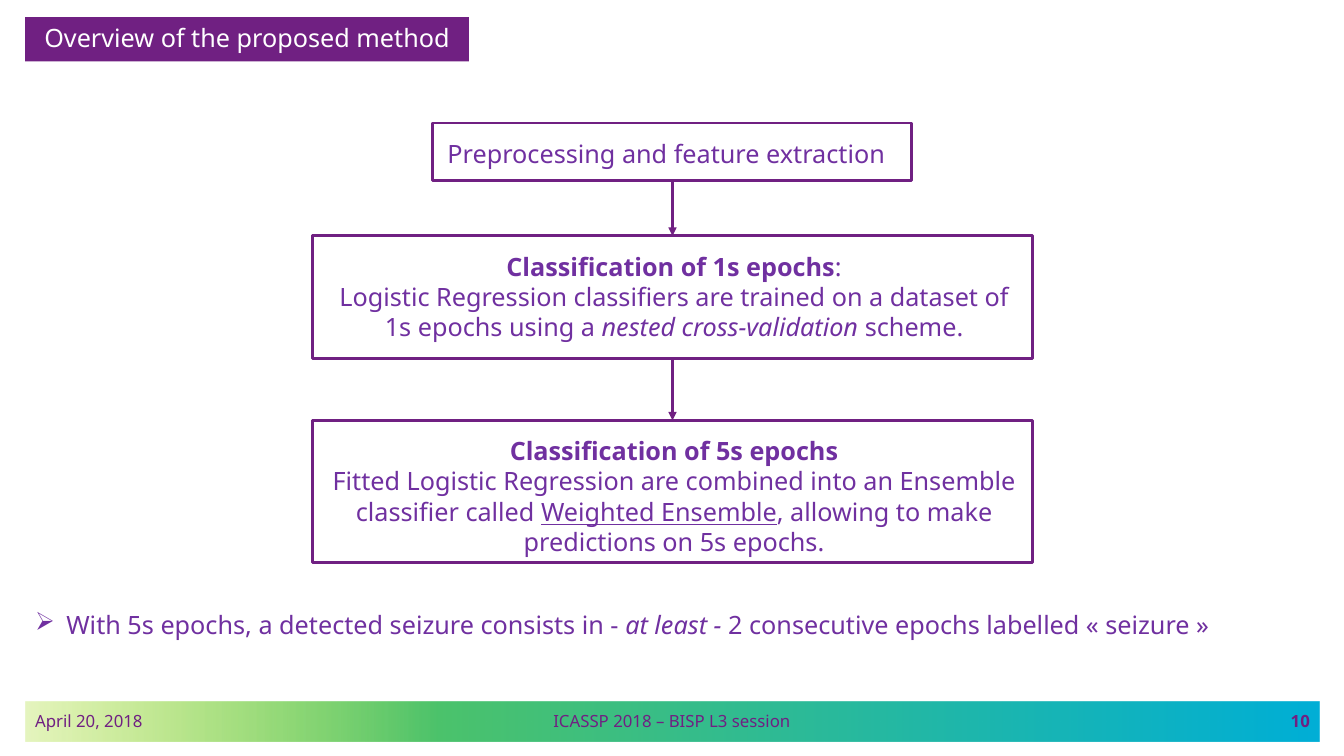
import pptx
import pptx.util
import pptx.dml.color
import pptx.enum.shapes
import pptx.enum.text
import pptx.oxml
import pptx.oxml.ns
from dataclasses import dataclass
from pptx.util import Inches


@dataclass(frozen=True)
class Theme:
    font: str = "Noto Sans"
    plum: str = "702082"
    violet: str = "7030A0"
    white: str = "FFFFFF"
    # position in percent, colour, opacity in percent
    band: tuple = ((0, "97D700", 25), (32, "4CC36C", 100), (100, "00AFD7", 100))
    body_size: int = 18
    footer_size: int = 12
    line_width: int = 2


theme = Theme()
rgb = pptx.dml.color.RGBColor.from_string
LEFT, CENTER, RIGHT = (pptx.enum.text.PP_ALIGN.LEFT, pptx.enum.text.PP_ALIGN.CENTER,
                       pptx.enum.text.PP_ALIGN.RIGHT)
TOP, MIDDLE = pptx.enum.text.MSO_ANCHOR.TOP, pptx.enum.text.MSO_ANCHOR.MIDDLE
RECTANGLE = pptx.enum.shapes.MSO_SHAPE.RECTANGLE

presentation = pptx.Presentation()
presentation.slide_width = Inches(13.33)
presentation.slide_height = Inches(7.5)
slide = presentation.slides.add_slide(presentation.slide_layouts[6])


def add_rectangle(left, top, width, height):
    shape = slide.shapes.add_shape(RECTANGLE, Inches(left), Inches(top),
                                   Inches(width), Inches(height))
    shape.shadow.inherit = False
    return shape


def write(shape, paragraphs, size, color, align, anchor=TOP):
    """Fill a shape with paragraphs of (text, style) runs; style holds any of b, i, u."""
    frame = shape.text_frame
    frame.word_wrap = True
    frame.vertical_anchor = anchor
    for index, runs in enumerate(paragraphs):
        paragraph = frame.add_paragraph() if index else frame.paragraphs[0]
        paragraph.alignment = align
        for text, style in runs:
            run = paragraph.add_run()
            run.text = text
            run.font.name = theme.font
            run.font.size = pptx.util.Pt(size)
            run.font.color.rgb = rgb(color)
            run.font.bold = "b" in style
            run.font.italic = "i" in style
            run.font.underline = "u" in style


# Footer band and its three fields
band = add_rectangle(0.25, 6.96, 12.84, 0.4)
band.line.fill.background()
band.fill.gradient()
band.fill.gradient_angle = 0
stops = band.fill._fill._gradFill.find(pptx.oxml.ns.qn("a:gsLst"))
for stop in list(stops):
    stops.remove(stop)
for position, color, opacity in theme.band:
    stops.append(pptx.oxml.parse_xml(
        f'<a:gs {pptx.oxml.ns.nsdecls("a")} pos="{position * 1000}"><a:srgbClr val="{color}">'
        f'<a:alpha val="{opacity * 1000}"/></a:srgbClr></a:gs>'))

footer_fields = (
    (0.25, 3.63, "April 20, 2018", "", LEFT),
    (4.08, 5.17, "ICASSP 2018 – BISP L3 session", "", CENTER),
    (9.46, 3.63, "10", "b", RIGHT),
)
for left, width, text, style, align in footer_fields:
    field = slide.shapes.add_textbox(Inches(left), Inches(6.95), Inches(width), Inches(0.4))
    write(field, [[(text, style)]], theme.footer_size, theme.plum, align, MIDDLE)

# Title
title = add_rectangle(0.25, 0.17, 4.4, 0.44)
title.fill.solid()
title.fill.fore_color.rgb = rgb(theme.plum)
title.line.fill.background()
write(title, [[("Overview of the proposed method", "")]], theme.body_size, theme.white, CENTER)

# Flow chart: frame position, text position, alignment, paragraphs
steps = (
    ((4.29, 1.22, 4.75, 0.57), (4.34, 1.32, 4.93, 0.4), LEFT,
     [[("Preprocessing and feature extraction", "")]]),
    ((3.1, 2.34, 7.14, 1.22), (3.14, 2.44, 7.09, 1.01), CENTER,
     [[("Classification of 1s epochs", "b"), (":", "")],
      [("Logistic Regression classifiers are trained on a dataset of 1s epochs using a ", ""),
       ("nested cross-validation ", "i"), ("scheme.", "")]]),
    ((3.1, 4.17, 7.14, 1.41), (3.14, 4.27, 7.09, 1.31), CENTER,
     [[("Classification of 5s epochs", "b")],
      [("Fitted Logistic Regression are combined into an Ensemble classifier called ", ""),
       ("Weighted Ensemble", "u"), (", allowing to make predictions on 5s epochs.", "")]]),
)
for frame_box, text_box, align, paragraphs in steps:
    label = slide.shapes.add_textbox(*map(Inches, text_box))
    write(label, paragraphs, theme.body_size, theme.violet, align)
    outline = add_rectangle(*frame_box)
    outline.fill.background()
    outline.line.color.rgb = rgb(theme.plum)
    outline.line.width = pptx.util.Pt(theme.line_width)

for (upper, *_), (lower, *_) in zip(steps, steps[1:]):
    arrow = slide.shapes.add_connector(
        pptx.enum.shapes.MSO_CONNECTOR.STRAIGHT,
        Inches(6.67), Inches(upper[1] + upper[3]), Inches(6.67), Inches(lower[1]))
    arrow.line.color.rgb = rgb(theme.plum)
    arrow.line.width = pptx.util.Pt(theme.line_width)
    arrow_head = pptx.oxml.parse_xml(
        f'<a:tailEnd {pptx.oxml.ns.nsdecls("a")} type="triangle"/>')
    arrow.line._get_or_add_ln().append(arrow_head)
    arrow._element.spPr.append(
        pptx.oxml.parse_xml(f'<a:effectLst {pptx.oxml.ns.nsdecls("a")}/>'))

# Closing remark
remark = slide.shapes.add_textbox(Inches(0.25), Inches(6), Inches(12.84), Inches(0.4))
write(remark, [[("With 5s epochs, a detected seizure consists in - ", ""), ("at least -", "i"),
                (" 2 consecutive epochs labelled « seizure »", "")]],
      theme.body_size, theme.violet, LEFT)
properties = remark.text_frame.paragraphs[0]._p.get_or_add_pPr()
properties.set("marL", str(Inches(0.31)))
properties.set("indent", str(Inches(-0.31)))
properties.append(pptx.oxml.parse_xml(
    f'<a:buChar {pptx.oxml.ns.nsdecls("a")} char="➢"/>'))

presentation.save("out.pptx")
